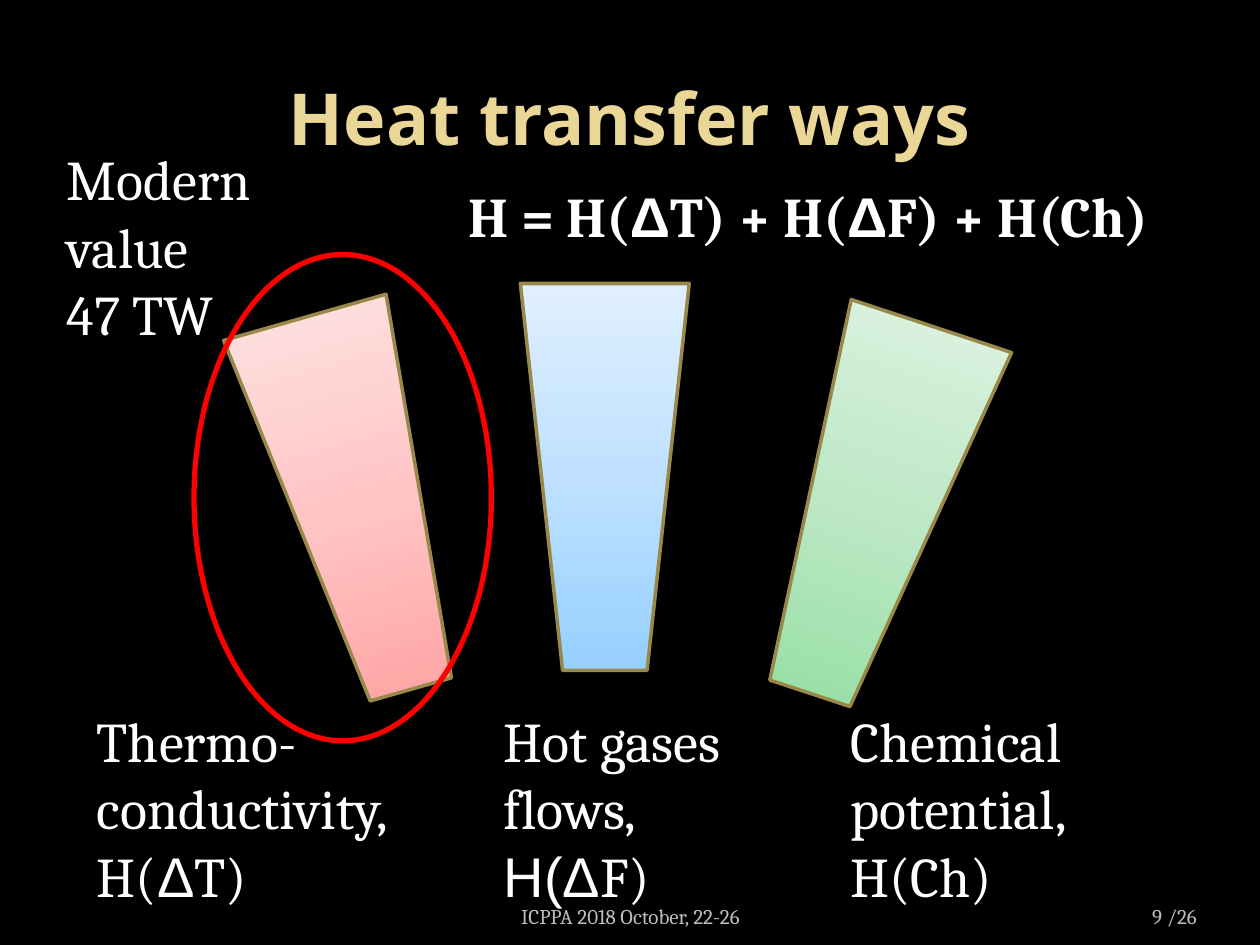
from copy import deepcopy
from dataclasses import dataclass

from pptx import Presentation
from pptx.dml.color import RGBColor
from pptx.enum.shapes import MSO_SHAPE
from pptx.enum.text import MSO_ANCHOR, MSO_AUTO_SIZE, PP_ALIGN
from pptx.oxml.ns import qn
from pptx.util import Inches, Pt

TRAPEZOID, OVAL = MSO_SHAPE.TRAPEZOID, MSO_SHAPE.OVAL
LEFT, CENTER, RIGHT = PP_ALIGN.LEFT, PP_ALIGN.CENTER, PP_ALIGN.RIGHT
TOP, MIDDLE, BOTTOM = MSO_ANCHOR.TOP, MSO_ANCHOR.MIDDLE, MSO_ANCHOR.BOTTOM
GROW, FIXED = MSO_AUTO_SIZE.SHAPE_TO_FIT_TEXT, MSO_AUTO_SIZE.NONE

COLORS = {
    "background": "000000",
    "title": "EAD696",
    "text": "FFFFFF",
    "footer": "BDBDBD",
    "outline": "98894B",
    "highlight": "FF0000",
}
BODY_FONT, SYMBOL_FONT, TITLE_FONT = "Cambria", "Arial", "Open Sans"
FLOW_WIDTH, FLOW_HEIGHT = 1.34, 3.07
LABEL_TOP, LABEL_HEIGHT = 5.56, 2.02


@dataclass
class Flow:
    left: float
    top: float
    rotation: float
    gradient: tuple[str, str, str]


@dataclass
class Label:
    """Text box; each paragraph is a list of (text, font name) runs."""
    left: float
    top: float
    width: float
    height: float
    paragraphs: list[list[tuple[str, str]]]
    size: int = 32
    bold: bool = False
    color: str = "text"
    align: PP_ALIGN = LEFT
    anchor: MSO_ANCHOR = TOP
    autosize: MSO_AUTO_SIZE = GROW
    side_margin: float = 0.1


FLOWS = [
    Flow(2.17, 2.46, 164.1, ("FFA0A0", "FFC5C5", "FFE3E3")),
    Flow(4.13, 2.25, 180, ("96D0FF", "BFE1FF", "E0EFFF")),
    Flow(6.24, 2.51, 198.3, ("91DEA0", "BDE8C5", "DFF3E3")),
]

DELTA = ("Δ", SYMBOL_FONT)
FOOTER_FORMAT = {"size": 12, "color": "footer", "anchor": BOTTOM, "autosize": FIXED}
FLOW_LABELS = [
    Label(0.67, LABEL_TOP, 2.83, LABEL_HEIGHT,
          [[("Thermo-conductivity, H(", BODY_FONT), DELTA, ("T)", BODY_FONT)]]),
    Label(3.9, LABEL_TOP, 2.68, LABEL_HEIGHT,
          [[("Hot gases flows,", BODY_FONT)],
           [("Η(Δ", SYMBOL_FONT), ("F)", BODY_FONT)]]),
    Label(6.65, LABEL_TOP, 2.68, LABEL_HEIGHT,
          [[("Chemical potential,", BODY_FONT)], [("H(Ch)", BODY_FONT)]]),
    Label(0.43, 1.1, 2.68, LABEL_HEIGHT,
          [[("Modern value", BODY_FONT)], [("47 TW", BODY_FONT)]]),
]
EQUATION_AND_FOOTER = [
    Label(3.62, 1.39, 6.18, 0.94,
          [[("H = H(", BODY_FONT), DELTA, ("T) + H(", BODY_FONT), DELTA,
            ("F) + H(Ch)", BODY_FONT)]], bold=True),
    Label(3.42, 7.02, 3.17, 0.4, [[("ICPPA 2018 October, 22-26", BODY_FONT)]],
          align=CENTER, **FOOTER_FORMAT),
    Label(8.67, 7.02, 0.83, 0.4, [[("9 /26", BODY_FONT)]],
          align=RIGHT, side_margin=0, **FOOTER_FORMAT),
]


def rgb(name: str) -> RGBColor:
    return RGBColor.from_string(COLORS[name])


def apply_format(target, values: dict) -> None:
    for name, value in values.items():
        setattr(target, name, value)


def format_run(run, font: str, size: int, bold: bool, color: str) -> None:
    apply_format(run.font, {"name": font, "size": Pt(size), "bold": bold})
    run.font.color.rgb = rgb(color)


def add_title(slide, text: str) -> None:
    title = slide.shapes.title
    apply_format(title, {"left": Inches(0.5), "top": Inches(0.3),
                         "width": Inches(9), "height": Inches(1.25)})
    title.text_frame.vertical_anchor = MIDDLE
    paragraph = title.text_frame.paragraphs[0]
    paragraph.alignment = CENTER
    run = paragraph.add_run()
    run.text = text
    format_run(run, TITLE_FONT, 41, True, "title")


def add_flow(slide, flow: Flow) -> None:
    shape = slide.shapes.add_shape(TRAPEZOID, Inches(flow.left), Inches(flow.top),
                                   Inches(FLOW_WIDTH), Inches(FLOW_HEIGHT))
    shape.rotation = flow.rotation
    shape.shadow.inherit = False
    shape.line.color.rgb = rgb("outline")
    shape.line.width = Pt(2)
    shape.fill.gradient()
    shape.fill.gradient_angle = 270
    # A new gradient has two stops; add the third
    stop_list = next(shape._element.spPr.iter(qn("a:gsLst")))
    stop_list.append(deepcopy(stop_list[0]))
    for index, (stop, color) in enumerate(zip(shape.fill.gradient_stops, flow.gradient)):
        stop.position = index / 2
        stop.color.rgb = RGBColor.from_string(color)


def add_highlight(slide) -> None:
    ring = slide.shapes.add_shape(OVAL, Inches(1.54), Inches(2.02),
                                  Inches(2.36), Inches(3.86))
    ring.shadow.inherit = False
    ring.fill.background()
    ring.line.color.rgb = rgb("highlight")
    ring.line.width = Pt(3)


def add_label(slide, label: Label) -> None:
    box = slide.shapes.add_textbox(Inches(label.left), Inches(label.top),
                                   Inches(label.width), Inches(label.height))
    frame = box.text_frame
    apply_format(frame, {"word_wrap": True, "auto_size": label.autosize,
                         "vertical_anchor": label.anchor,
                         "margin_left": Inches(label.side_margin),
                         "margin_right": Inches(label.side_margin)})
    for index, runs in enumerate(label.paragraphs):
        paragraph = frame.add_paragraph() if index else frame.paragraphs[0]
        paragraph.alignment = label.align
        for text, font in runs:
            run = paragraph.add_run()
            run.text = text
            format_run(run, font, label.size, label.bold, label.color)


def main() -> None:
    presentation = Presentation()
    presentation.slide_width, presentation.slide_height = Inches(10), Inches(7.5)
    slide = presentation.slides.add_slide(presentation.slide_layouts[5])
    slide.background.fill.solid()
    slide.background.fill.fore_color.rgb = rgb("background")

    add_title(slide, "Heat transfer ways")
    # Heat flows and their captions
    for flow in FLOWS:
        add_flow(slide, flow)
    for label in FLOW_LABELS:
        add_label(slide, label)
    # Ring around the first flow, then the equation and footer
    add_highlight(slide)
    for label in EQUATION_AND_FOOTER:
        add_label(slide, label)

    presentation.save("out.pptx")


if __name__ == "__main__":
    main()
